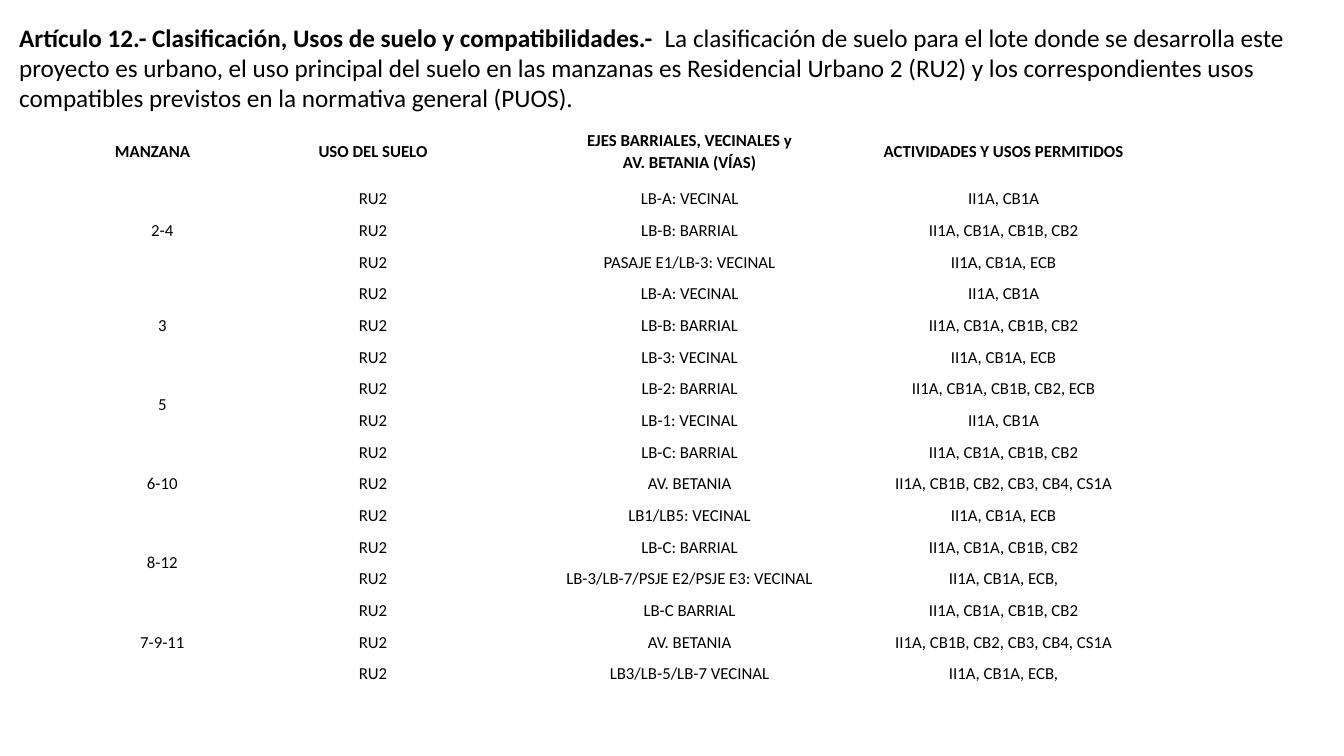
from copy import deepcopy
from dataclasses import dataclass

from pptx import Presentation
from pptx.dml.color import RGBColor
from pptx.enum.text import MSO_ANCHOR, MSO_AUTO_SIZE, PP_ALIGN
from pptx.oxml.ns import qn
from pptx.util import Inches, Pt


@dataclass(frozen=True)
class Theme:
    """Colours, typeface and type sizes of the slide."""
    font: str = "Calibri"
    ink: RGBColor = RGBColor(0x00, 0x00, 0x00)
    article_size: int = 18
    table_size: int = 12


THEME = Theme()

ARTICLE = [
    ("Artículo 12.- Clasificación, Usos de suelo y compatibilidades.- ", True),
    (" La clasificación de suelo para el lote donde se desarrolla este proyecto "
     "es urbano, el uso principal del suelo en las manzanas es Residencial "
     "Urbano 2 (RU2) y los correspondientes usos compatibles previstos en la "
     "normativa general (PUOS).", False),
]

HEADERS = ["MANZANA", "USO DEL SUELO",
           "EJES BARRIALES, VECINALES y\nAV. BETANIA (VÍAS)",
           "ACTIVIDADES Y USOS PERMITIDOS"]
COL_WIDTHS = [1.04, 3.14, 3.14, 3.09]
HEADER_HEIGHT = 0.63
LAND_USE = "RU2"

BLOCKS = [
    ("2-4", [("LB-A: VECINAL", "II1A, CB1A"),
             ("LB-B: BARRIAL", "II1A, CB1A, CB1B, CB2"),
             ("PASAJE E1/LB-3: VECINAL", "II1A, CB1A, ECB")]),
    ("3", [("LB-A: VECINAL", "II1A, CB1A"),
           ("LB-B: BARRIAL", "II1A, CB1A, CB1B, CB2"),
           ("LB-3: VECINAL", "II1A, CB1A, ECB")]),
    ("5", [("LB-2: BARRIAL", "II1A, CB1A, CB1B, CB2, ECB"),
           ("LB-1: VECINAL", "II1A, CB1A")]),
    ("6-10", [("LB-C: BARRIAL", "II1A, CB1A, CB1B, CB2"),
              ("AV. BETANIA", "II1A, CB1B, CB2, CB3, CB4, CS1A"),
              ("LB1/LB5: VECINAL", "II1A, CB1A, ECB")]),
    ("8-12", [("LB-C: BARRIAL", "II1A, CB1A, CB1B, CB2"),
              ("LB-3/LB-7/PSJE E2/PSJE E3: VECINAL", "II1A, CB1A, ECB,")]),
    ("7-9-11", [("LB-C BARRIAL", "II1A, CB1A, CB1B, CB2"),
                ("AV. BETANIA", "II1A, CB1B, CB2, CB3, CB4, CS1A"),
                ("LB3/LB-5/LB-7 VECINAL", "II1A, CB1A, ECB,")]),
]


def set_attrs(obj, values):
    """Set each named attribute of an object."""
    for name, value in values.items():
        setattr(obj, name, value)


def style_run(r, size, bold):
    """Apply the theme typeface and ink to a run."""
    set_attrs(r.font, {"name": THEME.font, "size": Pt(size), "bold": bold})
    r.font.color.rgb = THEME.ink


def add_article(slide, left, top, width, height):
    """Place the article text in the title placeholder."""
    sp = slide.shapes.title
    set_attrs(sp, {"left": Inches(left), "top": Inches(top),
                   "width": Inches(width), "height": Inches(height)})
    tf = sp.text_frame
    set_attrs(tf, {"word_wrap": True, "vertical_anchor": MSO_ANCHOR.TOP,
                   "auto_size": MSO_AUTO_SIZE.SHAPE_TO_FIT_TEXT,
                   "margin_left": Inches(0.1), "margin_right": Inches(0.1),
                   "margin_top": Inches(0.05), "margin_bottom": Inches(0.05)})
    p = tf.paragraphs[0]
    set_attrs(p, {"alignment": PP_ALIGN.LEFT, "line_spacing": 1.0,
                  "space_before": Pt(0)})
    for text, bold in ARTICLE:
        r = p.add_run()
        r.text = text
        style_run(r, THEME.article_size, bold)


def fill_cell(cell, text, bold=False, align=PP_ALIGN.CENTER):
    """Write and format one table cell."""
    set_attrs(cell, {"vertical_anchor": MSO_ANCHOR.MIDDLE,
                     "margin_left": Inches(0.05), "margin_right": Inches(0.05),
                     "margin_top": 0, "margin_bottom": 0})
    cell.fill.background()
    p = cell.text_frame.paragraphs[0]
    p.text = text
    set_attrs(p, {"alignment": align, "line_spacing": 1.07})
    for r in p.runs:
        style_run(r, THEME.table_size, bold)
    for br in p._p.findall(qn("a:br")):
        br.append(deepcopy(p.runs[0].font._element))


def add_uses_table(slide, left, top, width, height):
    """Place the land use table, merging the block column by group."""
    n_rows = sum(len(streets) for _, streets in BLOCKS)
    frame = slide.shapes.add_table(n_rows + 1, len(HEADERS), Inches(left),
                                   Inches(top), Inches(width), Inches(height))
    table = frame.table
    set_attrs(table, {"first_row": False, "horz_banding": False})
    for col, share in zip(table.columns, COL_WIDTHS):
        col.width = Inches(width * share / sum(COL_WIDTHS))
    for i, row in enumerate(table.rows):
        row.height = Inches((height - HEADER_HEIGHT) / n_rows if i
                            else HEADER_HEIGHT)
    for c, text in enumerate(HEADERS):
        fill_cell(table.cell(0, c), text, True,
                  PP_ALIGN.CENTER if c else PP_ALIGN.LEFT)
    start = 1
    for block, streets in BLOCKS:
        end = start + len(streets)
        table.cell(start, 0).merge(table.cell(end - 1, 0))
        fill_cell(table.cell(start, 0), block)
        for r, values in enumerate(streets, start):
            for c, text in enumerate((LAND_USE, *values), 1):
                fill_cell(table.cell(r, c), text)
        start = end


def main():
    """Build and save the slide."""
    prs = Presentation()
    set_attrs(prs, {"slide_width": Inches(13.33), "slide_height": Inches(7.5)})
    slide = prs.slides.add_slide(prs.slide_layouts[5])
    add_article(slide, 0.09, 0.17, 13.11, 1.01)
    add_uses_table(slide, 1.09, 1.18, 10.41, 5.66)
    prs.save("out.pptx")


if __name__ == "__main__":
    main()
